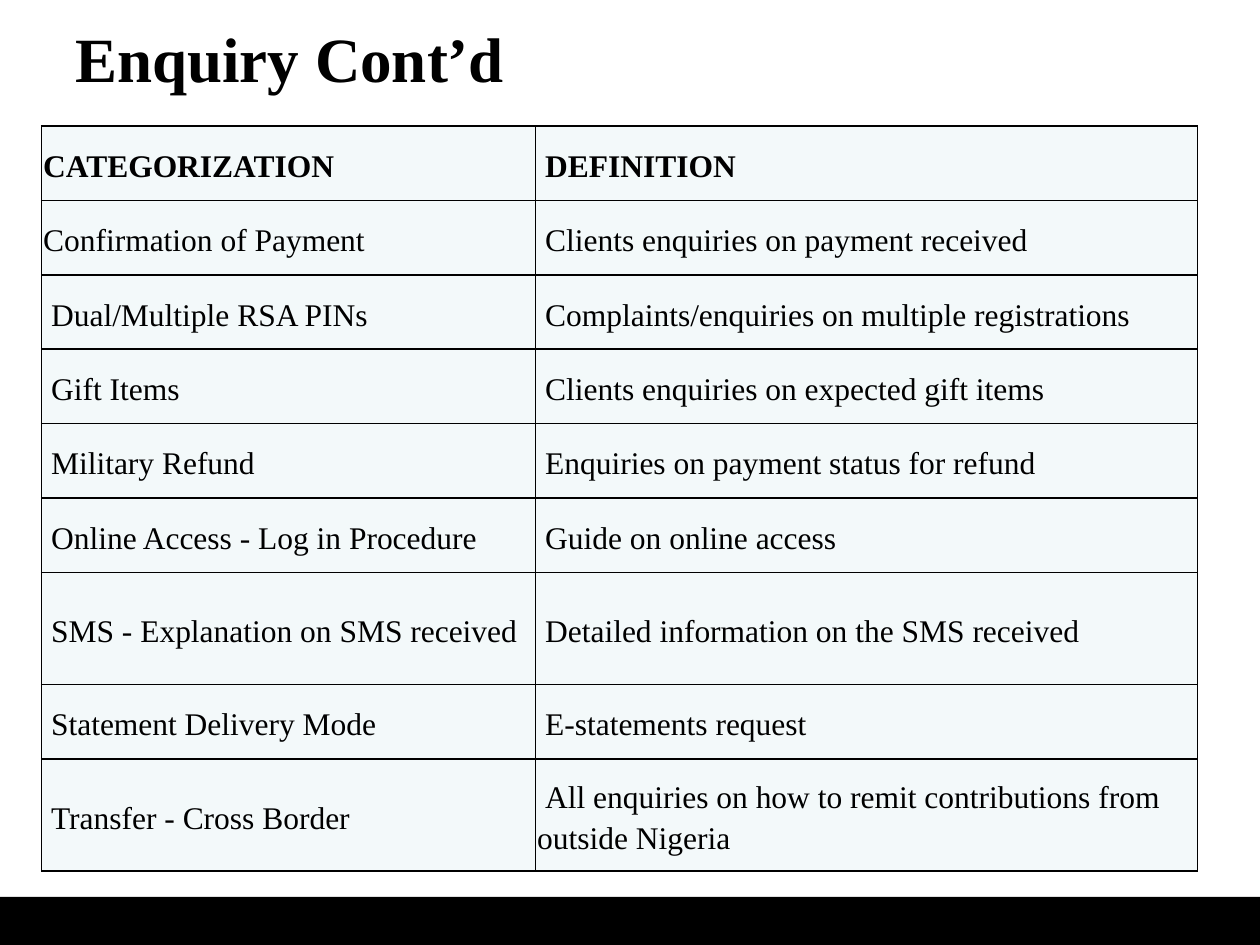
from dataclasses import dataclass

from lxml import etree
from pptx import Presentation
from pptx.dml.color import RGBColor
from pptx.enum.shapes import MSO_SHAPE
from pptx.enum.text import MSO_ANCHOR
from pptx.oxml.ns import qn
from pptx.util import Cm, Pt

RECTANGLE = MSO_SHAPE.RECTANGLE
MIDDLE = MSO_ANCHOR.MIDDLE


@dataclass(frozen=True)
class Theme:
    font: str = "Times New Roman"
    ink: str = "000000"
    cell_fill: str = "F3F9FA"
    title_size: int = 36
    table_size: int = 18
    line_spacing: float = 1.15
    border_width: int = 1


THEME = Theme()
SLIDE_WIDTH, SLIDE_HEIGHT = Cm(25.4), Cm(19.05)
BAR_HEIGHT = Cm(0.97)
COLUMN_WIDTHS = (Cm(9.96), Cm(13.34))
ROW_HEIGHT, TALL_ROW_HEIGHT = Cm(1.5), Cm(2.26)
TALL_ROWS = (6, 8)
FIRST_LINE_INDENT = Cm(0.16)
CELL_INSET = Cm(0.03)

ENQUIRIES = [
    ("CATEGORIZATION", "DEFINITION"),
    ("Confirmation of Payment", "Clients enquiries on payment received"),
    ("Dual/Multiple RSA PINs", "Complaints/enquiries on multiple registrations"),
    ("Gift Items", "Clients enquiries on expected gift items"),
    ("Military Refund", "Enquiries on payment status for refund"),
    ("Online Access - Log in Procedure", "Guide on online access"),
    ("SMS - Explanation on SMS received", "Detailed information on the SMS received"),
    ("Statement Delivery Mode", "E-statements request"),
    ("Transfer - Cross Border",
     "All enquiries on how to remit contributions from outside Nigeria"),
]


def write_text(text_frame, text, *, size, bold=False, line_spacing=None, indent=0):
    text_frame.word_wrap = True
    paragraph = text_frame.paragraphs[0]
    if indent:
        properties = paragraph._p.get_or_add_pPr()
        properties.set("marL", "0")
        properties.set("indent", str(int(indent)))
    if line_spacing:
        paragraph.line_spacing = line_spacing
    run = paragraph.add_run()
    run.text = text
    run.font.name = THEME.font
    run.font.size = Pt(size)
    run.font.bold = bold
    run.font.color.rgb = RGBColor.from_string(THEME.ink)


def add_title(slide, text):
    box = slide.shapes.add_textbox(Cm(1.27), Cm(0.2), Cm(22.86), Cm(1.9))
    box.text_frame.vertical_anchor = MIDDLE
    write_text(box.text_frame, text, size=THEME.title_size, bold=True)


def add_footer_bar(slide):
    bar = slide.shapes.add_shape(
        RECTANGLE, 0, SLIDE_HEIGHT - BAR_HEIGHT, SLIDE_WIDTH, BAR_HEIGHT)
    bar.shadow.inherit = False
    bar.fill.solid()
    bar.fill.fore_color.rgb = RGBColor.from_string(THEME.ink)
    bar.line.fill.background()


def add_cell_borders(cell):
    properties = cell._tc.get_or_add_tcPr()
    for side in ("a:lnL", "a:lnR", "a:lnT", "a:lnB"):
        line = etree.SubElement(properties, qn(side), w=str(int(Pt(THEME.border_width))))
        fill = etree.SubElement(line, qn("a:solidFill"))
        etree.SubElement(fill, qn("a:srgbClr"), val=THEME.ink)


def format_cell(cell):
    cell.vertical_anchor = MIDDLE
    cell.margin_left = cell.margin_right = cell.margin_top = CELL_INSET
    cell.margin_bottom = 0
    add_cell_borders(cell)
    cell.fill.solid()
    cell.fill.fore_color.rgb = RGBColor.from_string(THEME.cell_fill)


def add_enquiry_table(slide):
    heights = [TALL_ROW_HEIGHT if row in TALL_ROWS else ROW_HEIGHT
               for row in range(len(ENQUIRIES))]
    table = slide.shapes.add_table(
        len(ENQUIRIES), len(COLUMN_WIDTHS), Cm(0.84), Cm(2.54),
        sum(COLUMN_WIDTHS), sum(heights)).table
    for column, width in zip(table.columns, COLUMN_WIDTHS):
        column.width = width
    for row_index, texts in enumerate(ENQUIRIES):
        table.rows[row_index].height = heights[row_index]
        for column_index, text in enumerate(texts):
            cell = table.cell(row_index, column_index)
            format_cell(cell)
            # The first two categories start flush with the border
            flush = column_index == 0 and row_index < 2
            write_text(cell.text_frame, text, size=THEME.table_size,
                       bold=row_index == 0, line_spacing=THEME.line_spacing,
                       indent=0 if flush else FIRST_LINE_INDENT)


def main():
    presentation = Presentation()
    presentation.slide_width = SLIDE_WIDTH
    presentation.slide_height = SLIDE_HEIGHT
    slide = presentation.slides.add_slide(presentation.slide_layouts[6])

    # Footer, heading and table, from back to front
    add_footer_bar(slide)
    add_title(slide, "Enquiry Cont’d")
    add_enquiry_table(slide)

    presentation.save("out.pptx")


if __name__ == "__main__":
    main()
